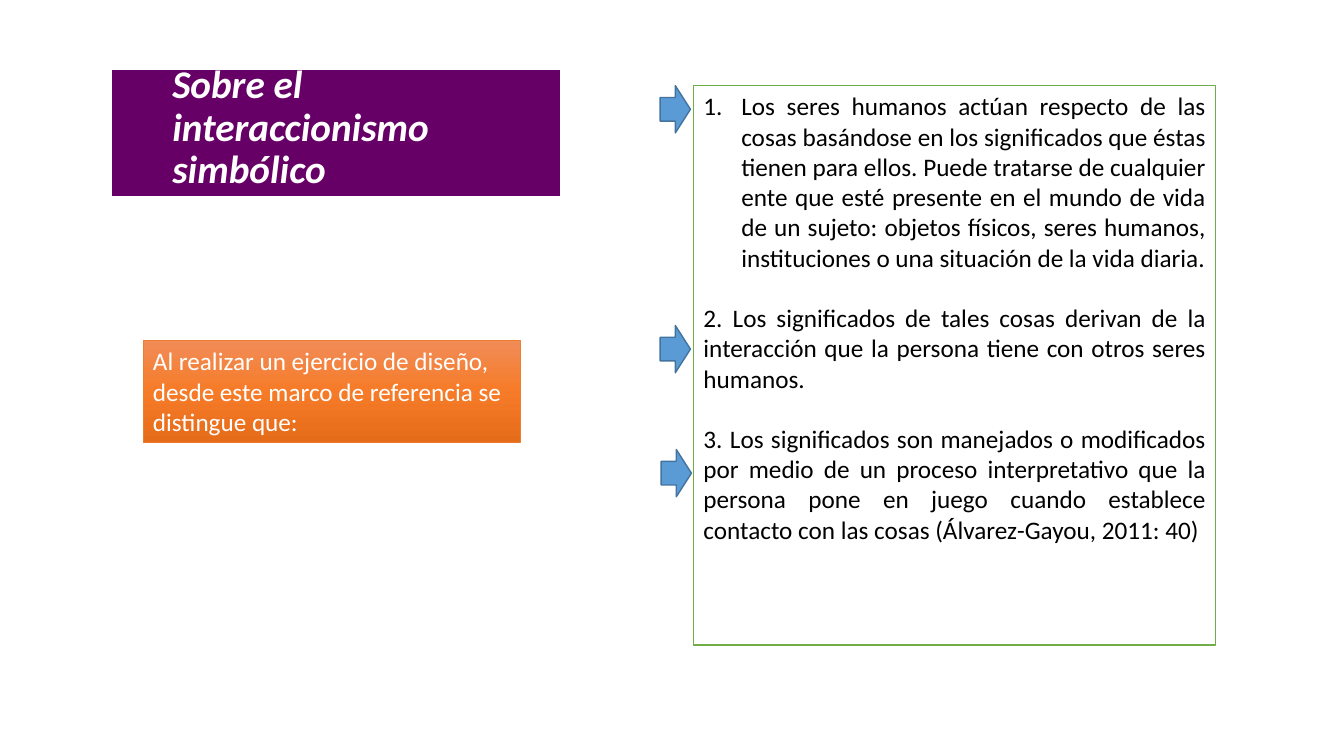
import copy
import dataclasses

import lxml.etree
import pptx
import pptx.dml.color
import pptx.enum.shapes
import pptx.enum.text
import pptx.oxml.ns
import pptx.util

Pt = pptx.util.Pt
RGB = pptx.dml.color.RGBColor.from_string
SHAPE = pptx.enum.shapes.MSO_SHAPE
ALIGN = pptx.enum.text.PP_ALIGN
ANCHOR = pptx.enum.text.MSO_ANCHOR


@dataclasses.dataclass(frozen=True)
class Theme:
    """Colours, font and type sizes of the slide."""
    font: str = "Calibri"
    title_size: float = 28
    body_size: float = 18
    white: str = "FFFFFF"
    black: str = "000000"
    purple: str = "660066"
    green: str = "70AD47"
    orange: str = "ED7D31"
    orange_blend: tuple = ((0, "F18C57"), (0.5, "F67B28"), (1, "E56C19"))
    blue: str = "5B9BD5"
    dark_blue: str = "43739E"


THEME = Theme()

PREMISES = (
    "Los seres humanos actúan respecto de las cosas basándose en los significados que éstas "
    "tienen para ellos. Puede tratarse de cualquier ente que esté presente en el mundo de vida "
    "de un sujeto: objetos físicos, seres humanos, instituciones o una situación de la vida diaria.",
    "2. Los significados de tales cosas derivan de la interacción que la persona tiene con otros "
    "seres humanos.",
    "3. Los significados son manejados o modificados por medio de un proceso interpretativo que la "
    "persona pone en juego cuando establece contacto con las cosas (Álvarez-Gayou, 2011: 40)",
)
ARROWS = ((471.6, 61.2), (471.6, 232.5), (472.3, 321.1))


def add_panel(slide, kind, left, top, width, height, fill=None, line=None, line_width=1):
    """Add a preset shape with a plain fill and an optional outline."""
    panel = slide.shapes.add_shape(kind, Pt(left), Pt(top), Pt(width), Pt(height))
    panel.shadow.inherit = False
    if fill:
        panel.fill.solid()
        panel.fill.fore_color.rgb = RGB(fill)
    if line:
        panel.line.color.rgb = RGB(line)
        panel.line.width = Pt(line_width)
    else:
        panel.line.fill.background()
    return panel


def blend(panel, stops):
    """Fill a shape from top to bottom with the given colour stops."""
    panel.fill.gradient()
    panel.fill.gradient_angle = 270
    first = panel.fill.gradient_stops[0]
    stop_list = panel.fill._fill._gradFill.gsLst
    stop_list.insert(1, copy.deepcopy(stop_list[0]))
    for stop, (position, color) in zip(panel.fill.gradient_stops, stops):
        stop.position = position
        stop.color.rgb = RGB(color)


def write(shape, paragraphs, size=THEME.body_size, color=THEME.black, bold=False, italic=False,
          align=ALIGN.LEFT, anchor=ANCHOR.TOP, spacing=1.0, gap=0):
    """Write paragraphs into a shape and return them."""
    frame = shape.text_frame
    frame.word_wrap = True
    frame.vertical_anchor = anchor
    frame.text = "\n".join(paragraphs)
    for index, paragraph in enumerate(frame.paragraphs):
        paragraph.alignment = align
        paragraph.line_spacing = spacing
        paragraph.space_before = Pt(gap if index else 0)
        font = paragraph.runs[0].font
        font.name = THEME.font
        font.size = Pt(size)
        font.bold = bold
        font.italic = italic
        font.color.rgb = RGB(color)
    return frame.paragraphs


def number(paragraph, indent):
    """Give a paragraph an automatic number with a hanging indent."""
    properties = paragraph._p.get_or_add_pPr()
    properties.set("marL", str(Pt(indent)))
    properties.set("indent", str(-Pt(indent)))
    lxml.etree.SubElement(properties, pptx.oxml.ns.qn("a:buAutoNum"), type="arabicPeriod")


def main():
    """Build the slide and save it."""
    deck = pptx.Presentation()
    deck.slide_width, deck.slide_height = Pt(960), Pt(540)
    slide = deck.slides.add_slide(deck.slide_layouts[6])

    add_panel(slide, SHAPE.FLOWCHART_PROCESS, 80, 50, 320, 90, fill=THEME.purple)
    title = slide.shapes.add_textbox(Pt(116), Pt(42.5), Pt(266), Pt(98.5))
    write(title, ["Sobre el interaccionismo simbólico"], size=THEME.title_size, color=THEME.white,
          bold=True, italic=True, anchor=ANCHOR.MIDDLE, spacing=0.9)

    premises = add_panel(slide, SHAPE.RECTANGLE, 495.4, 61.2, 373, 399.6,
                         fill=THEME.white, line=THEME.green)
    numbered = write(premises, PREMISES, align=ALIGN.JUSTIFY, gap=21.6)
    number(numbered[0], 27)

    lead_in = add_panel(slide, SHAPE.RECTANGLE, 102.2, 243.4, 269.3, 72.7,
                        line=THEME.orange, line_width=0.5)
    blend(lead_in, THEME.orange_blend)
    write(lead_in, ["Al realizar un ejercicio de diseño, desde este marco de referencia se "
                    "distingue que:"], color=THEME.white)

    for left, top in ARROWS:
        add_panel(slide, SHAPE.RIGHT_ARROW, left, top, 21.6, 33.8,
                  fill=THEME.blue, line=THEME.dark_blue)

    deck.save("out.pptx")


if __name__ == "__main__":
    main()
